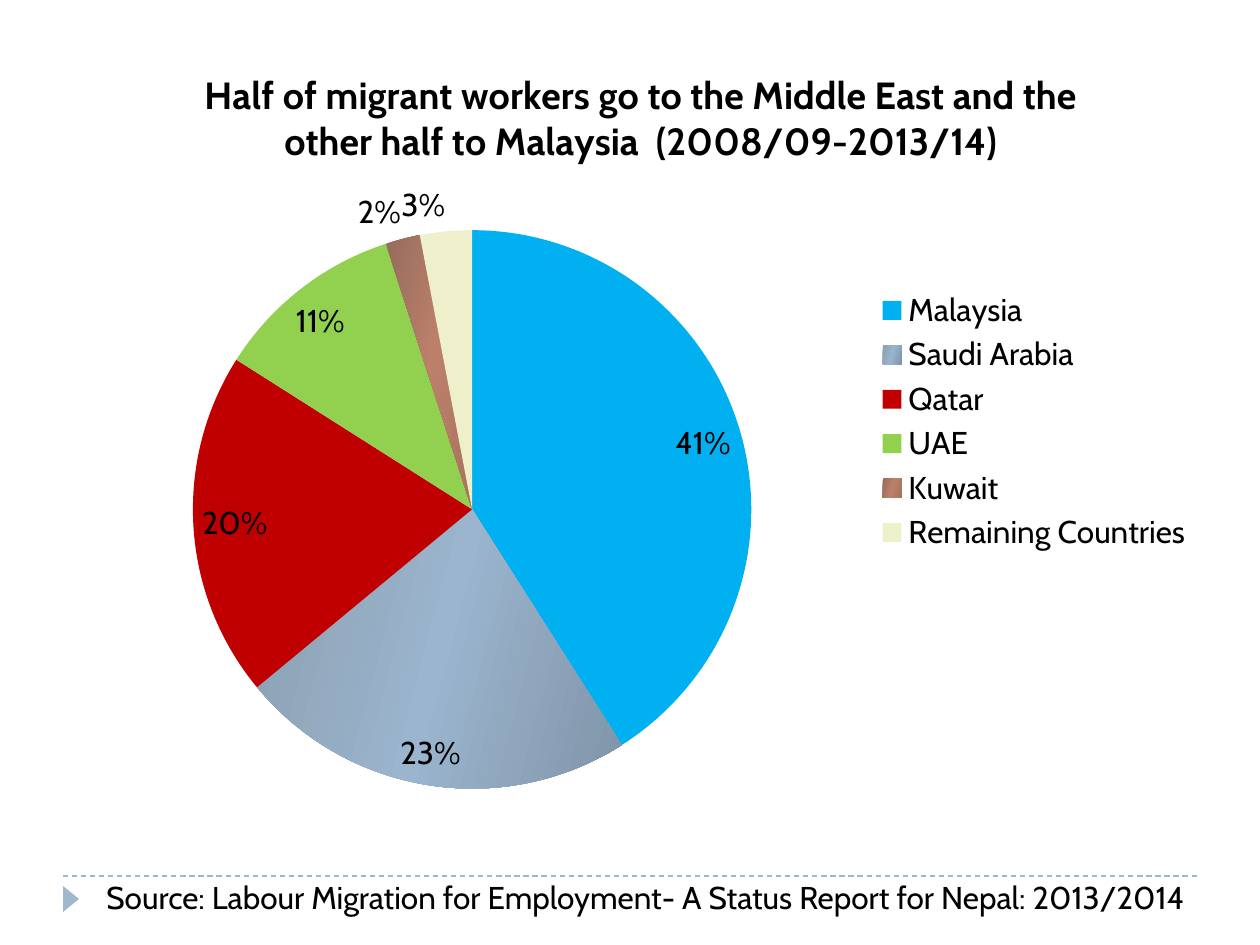
from dataclasses import dataclass

from lxml import etree
from pptx import Presentation
from pptx.chart.data import CategoryChartData
from pptx.dml.color import RGBColor
from pptx.enum.chart import XL_CHART_TYPE, XL_LABEL_POSITION, XL_LEGEND_POSITION
from pptx.enum.dml import MSO_LINE
from pptx.enum.shapes import MSO_CONNECTOR, MSO_SHAPE
from pptx.oxml import parse_xml
from pptx.oxml.ns import qn
from pptx.util import Emu, Pt

PIE = XL_CHART_TYPE.PIE
BEST_FIT = XL_LABEL_POSITION.BEST_FIT
RIGHT = XL_LEGEND_POSITION.RIGHT
DASH = MSO_LINE.DASH
STRAIGHT = MSO_CONNECTOR.STRAIGHT
TRIANGLE = MSO_SHAPE.ISOSCELES_TRIANGLE

FONT = "Cabin"
ACCENT = "9FB8CD"
TITLE = ("Half of migrant workers go to the Middle East and the "
         "other half to Malaysia  (2008/09-2013/14)")
SOURCE = "Source: Labour Migration for Employment- A Status Report for Nepal: 2013/2014"
DRAWING_NS = "http://schemas.openxmlformats.org/drawingml/2006/main"


@dataclass
class Slice:
    country: str
    share: int
    colors: tuple[str, ...]


SLICES = [
    Slice("Malaysia", 41, ("00B0F0",)),
    Slice("Saudi Arabia", 23, ("8A9EB0", "9BB5CE", "8094A8")),
    Slice("Qatar", 20, ("C00000",)),
    Slice("UAE", 11, ("92D050",)),
    Slice("Kuwait", 2, ("966C5D", "BC806A", "A8735F")),
    Slice("Remaining Countries", 3, ("EDF0CA",)),
]


def px(length: int) -> Emu:
    return Emu(round(length * 914400 / 126))


def color(value: str) -> RGBColor:
    return RGBColor.from_string(value)


def style_font(font, size: float, bold: bool = False) -> None:
    font.name = FONT
    font.size = Pt(size)
    font.bold = bold
    font.color.rgb = color("000000")


def place_plot(area, x: float, y: float, w: float, h: float) -> None:
    for old in area.findall(qn("c:layout")):
        area.remove(old)
    layout = etree.Element(qn("c:layout"))
    manual = etree.SubElement(layout, qn("c:manualLayout"))
    settings = {"layoutTarget": "inner", "xMode": "edge", "yMode": "edge",
                "x": x, "y": y, "w": w, "h": h}
    for name, value in settings.items():
        etree.SubElement(manual, qn(f"c:{name}")).set("val", str(value))
    area.insert(0, layout)


def fill_slice(point, colors: tuple[str, ...]) -> None:
    point.format.fill.solid()
    point.format.fill.fore_color.rgb = color(colors[0])
    if len(colors) == 1:
        return
    stops = "".join(
        f'<a:gs pos="{index * 50000}"><a:srgbClr val="{value}"/></a:gs>'
        for index, value in enumerate(colors))
    gradient = parse_xml(
        f'<a:gradFill xmlns:a="{DRAWING_NS}" rotWithShape="1">'
        f'<a:gsLst>{stops}</a:gsLst><a:lin ang="900000" scaled="0"/></a:gradFill>')
    properties = point.format.fill._xPr
    properties.replace(properties.find(qn("a:solidFill")), gradient)


def add_pie(slide) -> None:
    data = CategoryChartData()
    data.categories = [item.country for item in SLICES]
    data.add_series("Series 1", [item.share for item in SLICES])
    chart = slide.shapes.add_chart(PIE, px(77), px(39), px(1129), px(765), data).chart
    style_font(chart.font, 18)

    chart.has_title = True
    title = chart.chart_title
    title.include_in_layout = False
    title.text_frame.text = TITLE
    style_font(title.text_frame.paragraphs[0].runs[0].font, 21.6, True)

    chart.has_legend = True
    chart.legend.position = RIGHT
    chart.legend.include_in_layout = False
    style_font(chart.legend.font, 18)

    plot = chart.plots[0]
    plot.vary_by_categories = True
    place_plot(chart._chartSpace.chart.plotArea, 0.1, 0.25, 0.5, 0.73)
    series = plot.series[0]
    labels = series.data_labels
    labels.show_percentage = True
    labels.show_value = False
    labels.number_format = "0%"
    labels.number_format_is_linked = False
    labels.position = BEST_FIT
    style_font(labels.font, 18)
    for index, item in enumerate(SLICES):
        fill_slice(series.points[index], item.colors)


def add_footer(slide) -> None:
    rule = slide.shapes.add_connector(STRAIGHT, px(63), px(876), px(1197), px(876))
    rule.line.color.rgb = color(ACCENT)
    rule.line.width = Pt(0.75)
    rule.line.dash_style = DASH
    etree.SubElement(rule._element.spPr, qn("a:effectLst"))

    marker = slide.shapes.add_shape(TRIANGLE, px(58), px(891), px(26), px(16))
    marker.rotation = 90
    marker.shadow.inherit = False
    marker.fill.solid()
    marker.fill.fore_color.rgb = color(ACCENT)
    marker.line.fill.background()

    box = slide.shapes.add_textbox(px(94), px(872), px(1123), px(51))
    box.text_frame.word_wrap = True
    box.text_frame.text = SOURCE
    style_font(box.text_frame.paragraphs[0].runs[0].font, 18)


def main() -> None:
    deck = Presentation()
    deck.slide_width = px(1260)
    deck.slide_height = px(945)
    slide = deck.slides.add_slide(deck.slide_layouts[6])
    add_footer(slide)
    add_pie(slide)
    deck.save("out.pptx")


if __name__ == "__main__":
    main()
